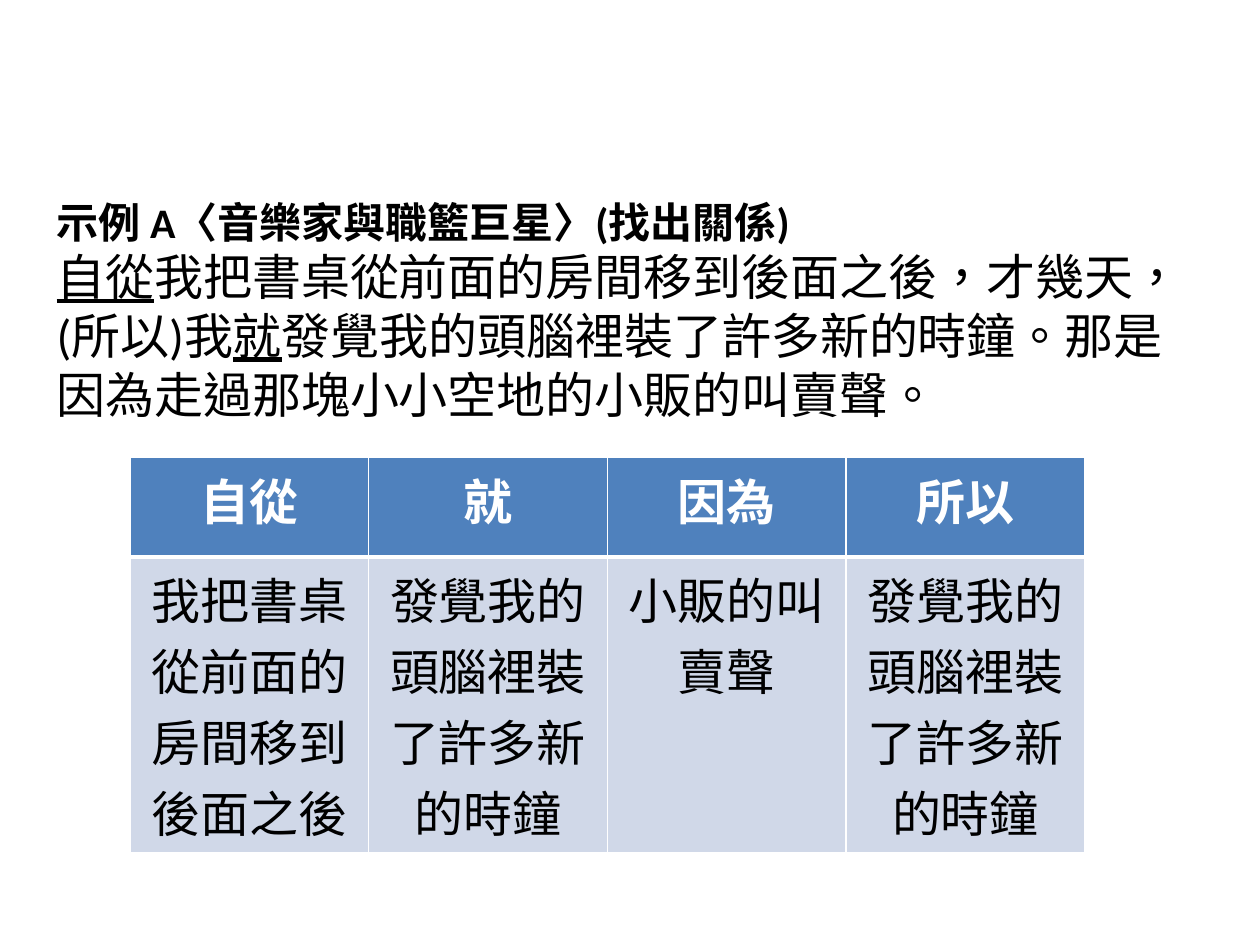
import pptx
import pptx.dml.color
import pptx.enum.text
import pptx.util
from lxml import etree
from pptx.oxml.ns import qn

Inches, Pt = pptx.util.Inches, pptx.util.Pt
ALIGN = pptx.enum.text.PP_ALIGN

HEAD = "示例 A〈音樂家與職籃巨星〉(找出關係)"
BODY = [  # text, underlined
    ("自從", True),
    ("我把書桌從前面的房間移到後面之後，才幾天，(所以)我", False),
    ("就", True),
    ("發覺我的頭腦裡裝了許多新的時鐘。那是因為走過那塊小小空地的小販的叫賣聲。", False),
]
LINKS = [  # linking word, clause it leads
    ("自從", "我把書桌從前面的房間移到後面之後"),
    ("就", "發覺我的頭腦裡裝了許多新的時鐘"),
    ("因為", "小販的叫賣聲"),
    ("所以", "發覺我的頭腦裡裝了許多新的時鐘"),
]
ROWS = [  # height, fill, font colour, bold, bottom border
    (0.79, "4F81BD", "FFFFFF", True, 3),
    (2.35, "D0D8E8", "000000", False, 1),
]
WIDE = 7.58


def color(code):
    return pptx.dml.color.RGBColor.from_string(code)


def write(para, text, face, size, code, bold=False, line=False):
    run = para.add_run()
    run.text = text
    font = run.font
    font.name, font.size = face, Pt(size)
    font.bold, font.underline = bold, line
    font.color.rgb = color(code)
    props = run._r.get_or_add_rPr()
    props.set("lang", "zh-TW")
    return props


def border(cell, base):
    props = cell._tc.get_or_add_tcPr()
    sides = [("lnL", 1), ("lnR", 1), ("lnT", 1), ("lnB", base)]
    for spot, (tag, size) in enumerate(sides):
        line = etree.Element(qn("a:" + tag), w=str(Pt(size)))
        fill = etree.SubElement(line, qn("a:solidFill"))
        etree.SubElement(fill, qn("a:srgbClr"), val="FFFFFF")
        props.insert(spot, line)


def title(slide):
    box = slide.shapes.add_textbox(Inches(0.35), Inches(0.3), Inches(9.15), Inches(4.32))
    frame = box.text_frame
    frame.word_wrap = True
    frame.vertical_anchor = pptx.enum.text.MSO_ANCHOR.MIDDLE
    para = frame.paragraphs[0]
    para.alignment = ALIGN.LEFT
    runs = [write(para, HEAD, "Calibri", 24, "000000", bold=True)]
    para.add_line_break()
    for text, line in BODY:
        runs.append(write(para, text, "Calibri", 28, "000000", line=line))
    for props in runs:
        etree.SubElement(props, qn("a:ea"), typeface="Calibri")


def grid(slide):
    """Add the table of linking words; its columns share the width evenly."""
    high = sum(row[0] for row in ROWS)
    table = slide.shapes.add_table(
        len(ROWS), len(LINKS), Inches(1.03), Inches(3.63),
        Inches(WIDE), Inches(high)).table
    for col in table.columns:
        col.width = Inches(WIDE / len(LINKS))
    for r, (high, fill, code, bold, base) in enumerate(ROWS):
        table.rows[r].height = Inches(high)
        for c, pair in enumerate(LINKS):
            cell = table.cell(r, c)
            cell.fill.solid()
            cell.fill.fore_color.rgb = color(fill)
            border(cell, base)
            para = cell.text_frame.paragraphs[0]
            para.alignment = ALIGN.CENTER
            write(para, pair[r], "Times New Roman", 28, code, bold)


def main():
    deck = pptx.Presentation()
    deck.slide_width, deck.slide_height = Inches(10), Inches(7.5)
    slide = deck.slides.add_slide(deck.slide_layouts[6])
    title(slide)
    grid(slide)
    deck.save("out.pptx")


if __name__ == "__main__":
    main()
